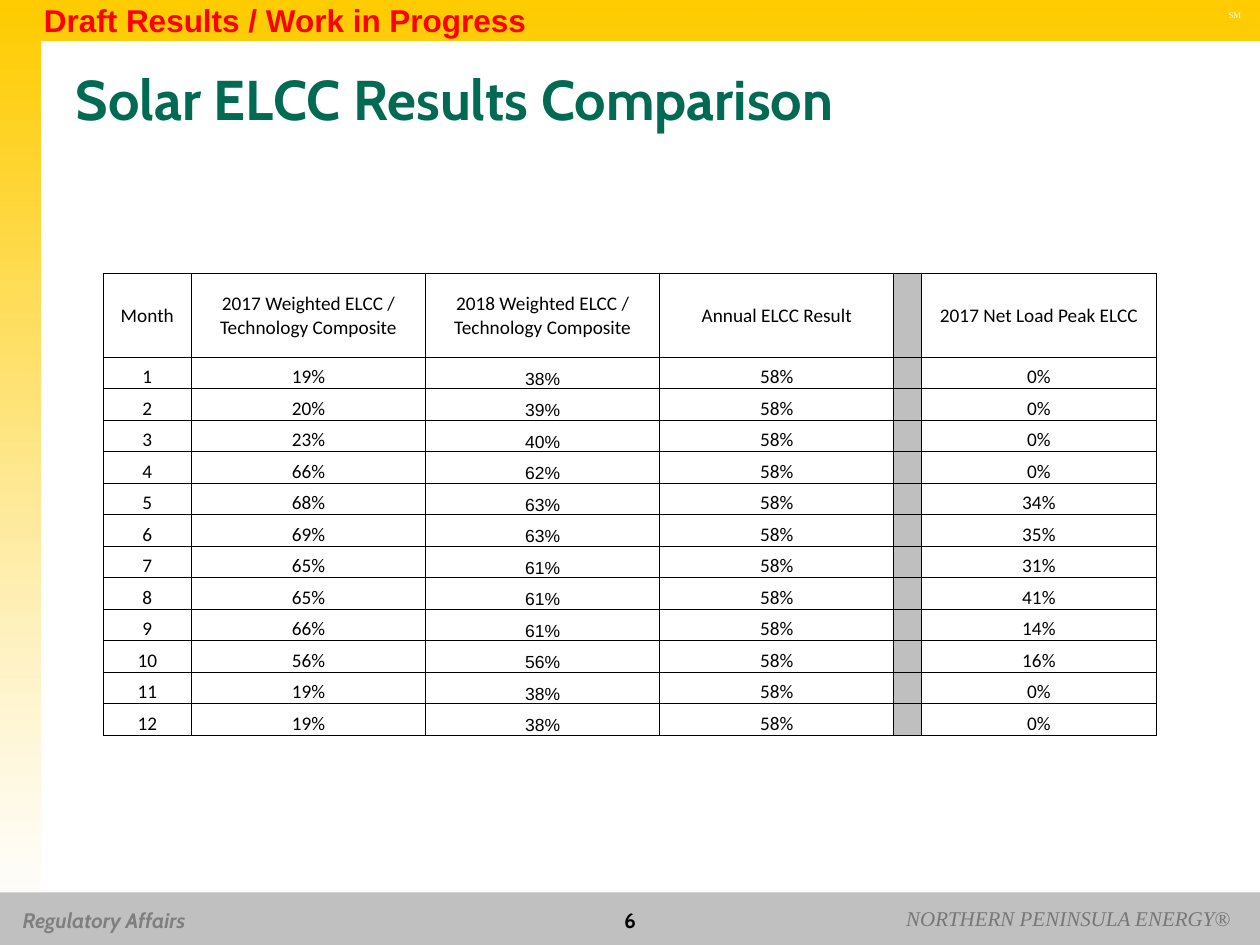
from lxml import etree
from pptx import Presentation
from pptx.dml.color import RGBColor
from pptx.enum import text as tx
from pptx.oxml.ns import qn
from pptx.util import Pt

GOLD = RGBColor(0xFF, 0xCC, 0x00)
WHITE = RGBColor(0xFF, 0xFF, 0xFF)
SILVER = RGBColor(0xC0, 0xC0, 0xC0)
GAP = RGBColor(0xBF, 0xBF, 0xBF)
GRAY = RGBColor(0x7F, 0x7F, 0x7F)
DIM = RGBColor(0x77, 0x77, 0x77)
GREEN = RGBColor(0x00, 0x6A, 0x53)
RED = RGBColor(0xFF, 0x00, 0x00)
BLACK = RGBColor(0x00, 0x00, 0x00)
LEFT, MID, RIGHT = tx.PP_ALIGN.LEFT, tx.PP_ALIGN.CENTER, tx.PP_ALIGN.RIGHT
TOP, CENTER, BOTTOM = tx.MSO_ANCHOR.TOP, tx.MSO_ANCHOR.MIDDLE, tx.MSO_ANCHOR.BOTTOM


def style(par, name, size, color, align=LEFT, bold=False, italic=False):
    par.alignment = align
    for run in par.runs:
        font = run.font
        font.name, font.size, font.bold, font.italic = name, Pt(size), bold, italic
        font.color.rgb = color


def label(box, words, anchor, *look):
    """Add a one-line text box; box is left, top, width, height in points."""
    frame = slide.shapes.add_textbox(*map(Pt, box)).text_frame
    frame.word_wrap = False
    frame.vertical_anchor = anchor
    frame.text = words
    style(frame.paragraphs[0], *look)


prs = Presentation()
prs.slide_width, prs.slide_height = Pt(720), Pt(540)
slide = prs.slides.add_slide(prs.slide_layouts[5])

# Gold frame along the top and left edges, in two layers
for layer in range(2):
    build = slide.shapes.build_freeform(Pt(0), Pt(522))
    edge = [(0, 0), (720, 0), (720, 23.8), (23.8, 23.8), (23.8, 522)]
    build.add_line_segments([(Pt(x), Pt(y)) for x, y in edge], close=True)
    frame = build.convert_to_shape()
    frame.shadow.inherit = False
    frame.line.fill.background()
    frame.fill.gradient()
    frame.fill.gradient_angle = 270
    stops = frame.fill.gradient_stops
    for stop, color, place in zip(stops, (GOLD, WHITE), (0, 1)):
        stop.color.rgb = color
        stop.position = place
    fade = frame._element.findall(".//" + qn("a:srgbClr"))[-1]
    etree.SubElement(fade, qn("a:alpha"), val="40000")

# Footer and marks
bar = slide.shapes.add_shape(1, Pt(0), Pt(510), Pt(720), Pt(30))
bar.shadow.inherit = False
bar.fill.solid()
bar.fill.fore_color.rgb = SILVER
bar.line.fill.background()
label((5.8, 515, 125, 21.6), "Regulatory Affairs", TOP, "Cabin", 12, GRAY, LEFT, True, True)
label((695, 2, 21.6, 13), "SM", TOP, "Times New Roman", 5, WHITE)
label((480.5, 514, 230, 21.6), "NORTHERN PENINSULA ENERGY®", TOP,
      "Times New Roman", 12, DIM, RIGHT, False, True)
label((276, 514, 168, 24), "6", CENTER, "Cabin", 12, BLACK, MID, True)
label((18, -3, 293, 29), "Draft Results / Work in Progress", TOP, "Arial", 18, RED, LEFT, True)

title = slide.shapes.title
title.left, title.top, title.width, title.height = Pt(36), Pt(27.4), Pt(648), Pt(57)
title.text_frame.text = "Solar ELCC Results Comparison"
title.text_frame.vertical_anchor = CENTER
style(title.text_frame.paragraphs[0], "Cabin", 32, GREEN, LEFT, True)

# Monthly results
heads = ["Month", "2017 Weighted ELCC / Technology Composite",
         "2018 Weighted ELCC / Technology Composite", "Annual ELCC Result", "",
         "2017 Net Load Peak ELCC"]
first = [19, 20, 23, 66, 68, 69, 65, 65, 66, 56, 19, 19]
second = [38, 39, 40, 62, 63, 63, 61, 61, 61, 56, 38, 38]
peak = [0, 0, 0, 0, 34, 35, 31, 41, 14, 16, 0, 0]
rows = [heads]
for month, (a, b, c) in enumerate(zip(first, second, peak), 1):
    rows.append([str(month), f"{a}%", f"{b}%", "58%", "", f"{c}%"])

wide = [50.4, 133.8, 133.8, 133.8, 16, 133.8]
grid = slide.shapes.add_table(len(rows), len(wide), Pt(59), Pt(156.2),
                              Pt(sum(wide)), Pt(48 + 12 * 18)).table
grid.first_row = grid.horz_banding = False
for col, width in zip(grid.columns, wide):
    col.width = Pt(width)
for r, row in enumerate(rows):
    grid.rows[r].height = Pt(18 if r else 48)
    for c, words in enumerate(row):
        cell = grid.cell(r, c)
        cell.margin_left = cell.margin_right = cell.margin_top = Pt(0.6)
        cell.margin_bottom = Pt(0)
        cell.vertical_anchor = BOTTOM if r else CENTER
        for side in ("a:lnL", "a:lnR", "a:lnT", "a:lnB"):
            line = etree.SubElement(cell._tc.get_or_add_tcPr(), qn(side), w=str(Pt(0.5)))
            ink = etree.SubElement(line, qn("a:solidFill"))
            etree.SubElement(ink, qn("a:srgbClr"), val=str(BLACK))
        par = cell.text_frame.paragraphs[0]
        if words:
            cell.fill.background()
            par.text = words
            name, size = ("Arial", 10) if r and c == 2 else ("Calibri", 11)
            style(par, name, size, BLACK, MID)
        else:
            cell.fill.solid()
            cell.fill.fore_color.rgb = GAP
            etree.SubElement(par._p, qn("a:endParaRPr"), sz="1100")

prs.save("out.pptx")
